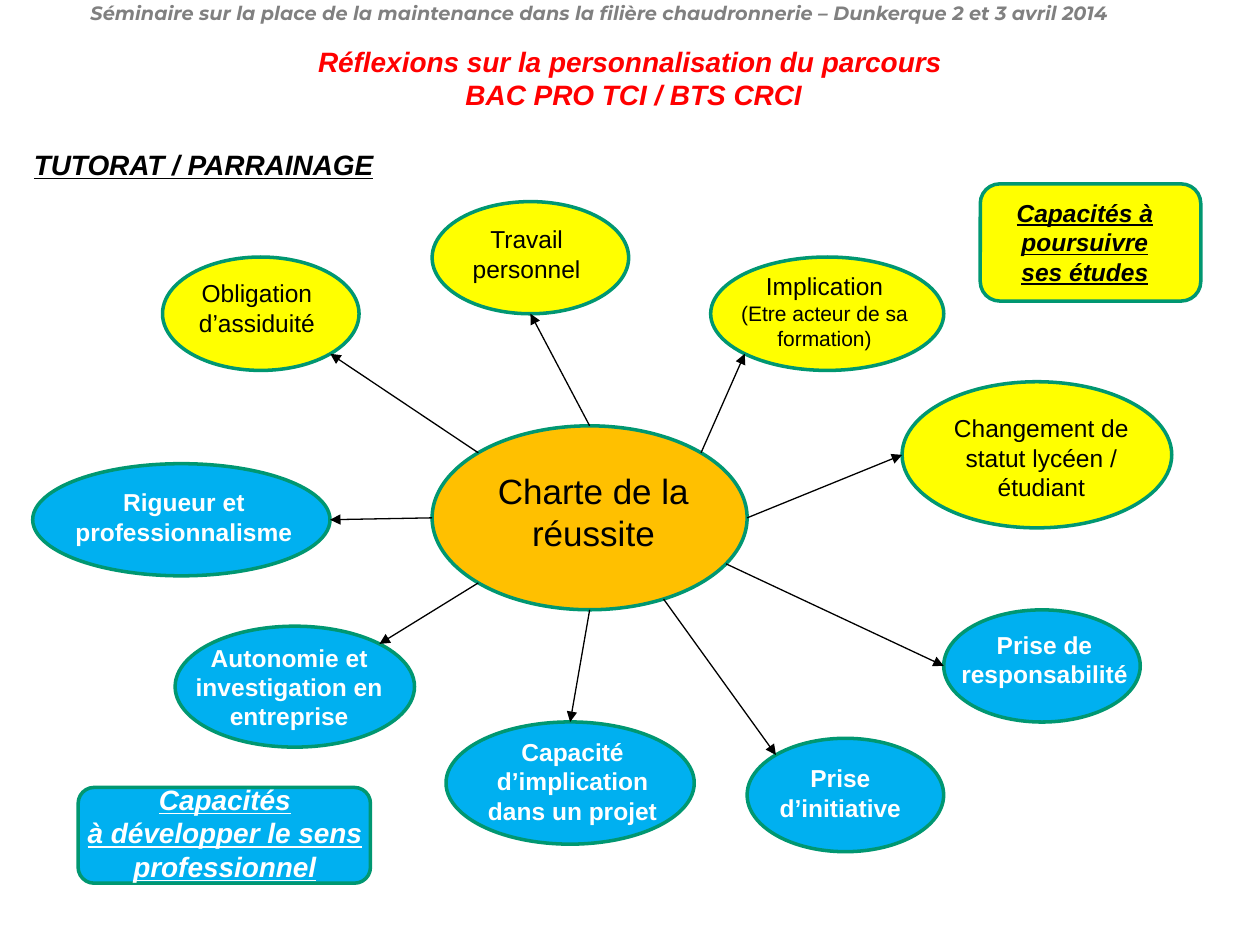
from dataclasses import dataclass
from math import cos, radians, sin

from lxml.etree import SubElement
from pptx import Presentation
from pptx.dml.color import RGBColor
from pptx.enum.shapes import MSO_CONNECTOR, MSO_SHAPE
from pptx.enum.text import MSO_ANCHOR, MSO_AUTO_SIZE, PP_ALIGN
from pptx.oxml.ns import qn
from pptx.util import Inches, Pt

# Boxes are (left, top, width, height) on a grid of 100 columns by 75 rows.
COLS, ROWS = 100, 75
WIDE, HIGH = Inches(10), Inches(7.5)
BLACK, WHITE, RED, GREY = "000000", "FFFFFF", "FF0000", "808080"
YELLOW, BLUE, GOLD, GREEN = "FFFF00", "00B0F0", "FFC000", "009771"

Box = tuple[float, float, float, float]


@dataclass
class Style:
    size: float = 14
    ink: str = BLACK
    bold: bool = False
    slant: bool = False
    under: bool = False
    face: str = "Arial"


@dataclass
class Node:
    """A filled shape with its label, given as (text, size) lines."""
    box: Box
    area: Box
    fill: str
    lines: list[tuple[str, float]]
    style: Style
    shape: MSO_SHAPE = MSO_SHAPE.OVAL


@dataclass
class Spoke:
    """A bubble with the angles, clockwise from the right, its arrow joins."""
    node: Node
    start: float
    end: float


def col(n: float) -> int:
    return round(WIDE * n / COLS)


def row(n: float) -> int:
    return round(HIGH * n / ROWS)


def place(box: Box) -> tuple[int, int, int, int]:
    x, y, w, h = box
    return col(x), row(y), col(w), row(h)


def paint(color, code: str) -> None:
    color.rgb = RGBColor.from_string(code)


def write(frame, lines, style: Style, align=PP_ALIGN.CENTER, wrap=True) -> None:
    frame.word_wrap = wrap
    frame.auto_size = MSO_AUTO_SIZE.NONE
    frame.vertical_anchor = MSO_ANCHOR.TOP
    for i, (text, size) in enumerate(lines):
        para = frame.add_paragraph() if i else frame.paragraphs[0]
        para.alignment = align
        run = para.add_run()
        run.text = text
        font = run.font
        font.name, font.size = style.face, Pt(size)
        font.bold, font.italic = style.bold, style.slant
        font.underline = style.under
        paint(font.color, style.ink)


def draw(slide, node: Node) -> None:
    shape = slide.shapes.add_shape(node.shape, *place(node.box))
    shape.shadow.inherit = False
    shape.fill.solid()
    paint(shape.fill.fore_color, node.fill)
    paint(shape.line.color, GREEN)
    shape.line.width = Pt(2)
    label = slide.shapes.add_textbox(*place(node.area))
    write(label.text_frame, node.lines, node.style)


def rim(box: Box, angle: float) -> tuple[int, int]:
    """Point on the ellipse that fills the box."""
    x, y, w, h = box
    turn = radians(angle)
    return col(x + w / 2 * (1 + cos(turn))), row(y + h / 2 * (1 + sin(turn)))


def link(slide, hub: Node, spoke: Spoke) -> None:
    line = slide.shapes.add_connector(
        MSO_CONNECTOR.STRAIGHT,
        *rim(hub.box, spoke.start), *rim(spoke.node.box, spoke.end))
    paint(line.line.color, BLACK)
    line.line.width = Pt(0.75)
    edge = line._element.spPr.find(qn("a:ln"))
    SubElement(edge, qn("a:tailEnd"), type="triangle")
    SubElement(line._element.spPr, qn("a:effectLst"))


def study(box: Box, area: Box, *lines: tuple[str, float]) -> Node:
    return Node(box, area, YELLOW, list(lines), Style())


def work(box: Box, area: Box, *texts: str) -> Node:
    style = Style(ink=WHITE, bold=True)
    return Node(box, area, BLUE, [(text, style.size) for text in texts], style)


HUB = Node((34.3, 33.8, 25, 14.6), (35.4, 36.8, 23.4, 7.7), GOLD,
           [("Charte de la réussite", 20)], Style())

SPOKES = [
    Spoke(study((12.9, 20.4, 15.6, 9), (14.1, 21.6, 12.6, 5.7),
                ("Obligation d’assiduité", 14)), 225, 45),
    Spoke(study((34.3, 16, 15.6, 8.9), (34.5, 17.3, 14.6, 5.7),
                ("Travail personnel", 14)), 270, 90),
    Spoke(study((56.4, 20.4, 18.5, 9), (55.1, 21, 20.7, 7.4),
                ("Implication", 14),
                ("(Etre acteur de sa formation)", 12)), 315, 135),
    Spoke(study((71.6, 30.3, 21.4, 11.6), (73.5, 32.3, 18.3, 8.1),
                ("Changement de statut lycéen / étudiant", 14)), 0, 180),
    Spoke(work((74.9, 48.4, 15.6, 8.9), (74.8, 49.5, 16.2, 5.7),
               "Prise de responsabilité"), 30, 180),
    Spoke(work((59.3, 58.6, 15.6, 9), (60.2, 60.1, 13, 5.7),
               "Prise d’initiative"), 62, 225),
    Spoke(work((35.4, 57.3, 19.7, 9.7), (37.3, 58, 16.3, 8.1),
               "Capacité", "d’implication dans un projet"), 90, 270),
    Spoke(work((13.9, 49.7, 19, 9.6), (11.9, 50.5, 22.1, 8.1),
               "Autonomie et investigation en entreprise"), 135, 315),
    Spoke(work((2.6, 36.8, 23.6, 8.9), (3.8, 38.2, 21.6, 5.7),
               "Rigueur et professionnalisme"), 180, 0),
]

KEYS = [
    Node((77.8, 14.6, 17.5, 9.3), (79.2, 15.2, 13.8, 8.1), YELLOW,
         [("Capacités à poursuivre ses études", 14)],
         Style(bold=True, slant=True, under=True), MSO_SHAPE.ROUNDED_RECTANGLE),
    Node((6.2, 62.5, 23.2, 7.6), (2.2, 61.6, 31.3, 9.1), BLUE,
         [("Capacités", 16), ("à développer le sens professionnel", 16)],
         Style(ink=WHITE, bold=True, slant=True, under=True),
         MSO_SHAPE.ROUNDED_RECTANGLE),
]


def main() -> None:
    deck = Presentation()
    deck.slide_width, deck.slide_height = WIDE, HIGH
    slide = deck.slides.add_slide(deck.slide_layouts[5])

    title = slide.shapes.title
    title.left, title.top, title.width, title.height = place((23.9, 3, 52.2, 6.4))
    write(title.text_frame,
          [("Réflexions sur la personnalisation du parcours", 16),
           (" BAC PRO TCI / BTS CRCI", 16)],
          Style(ink=RED, bold=True, slant=True), wrap=False)

    head = slide.shapes.add_textbox(*place((6.2, -0.4, 87.3, 2.9)))
    write(head.text_frame,
          [("Séminaire sur la place de la maintenance dans la filière "
            "chaudronnerie – Dunkerque 2 et 3 avril 2014", 11)],
          Style(ink=GREY, bold=True, slant=True, face="Montserrat"),
          PP_ALIGN.LEFT, wrap=False)

    topic = slide.shapes.add_textbox(*place((1.7, 11.2, 29.4, 3.7)))
    write(topic.text_frame, [("TUTORAT / PARRAINAGE", 16)],
          Style(bold=True, slant=True, under=True), PP_ALIGN.LEFT)

    for node in [HUB, *(spoke.node for spoke in SPOKES), *KEYS]:
        draw(slide, node)
    for spoke in SPOKES:
        link(slide, HUB, spoke)
    deck.save("out.pptx")


if __name__ == "__main__":
    main()
